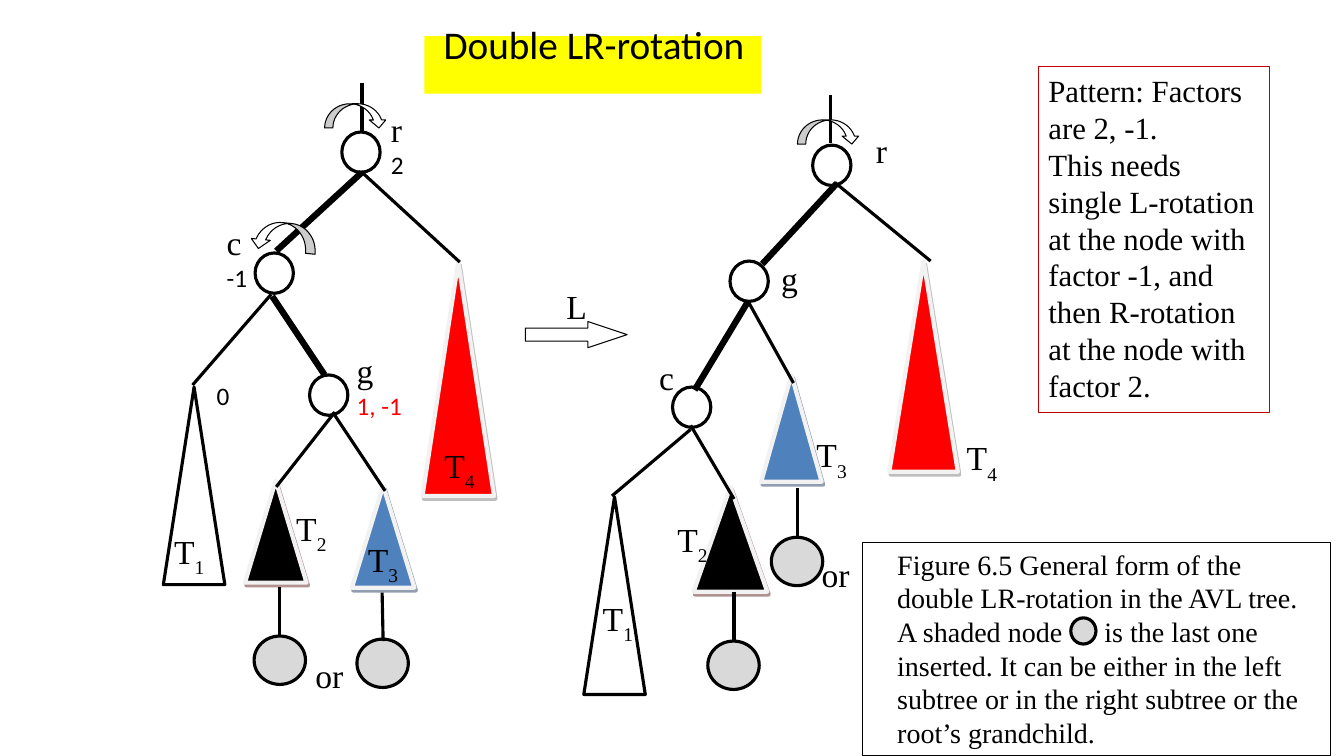
"""Build the slide on the double LR-rotation of an AVL tree."""
import lxml.etree
import pptx
import pptx.dml.color
import pptx.enum.shapes
import pptx.enum.text
import pptx.oxml.ns
import pptx.util

PX = 9144
KIND = pptx.enum.shapes.MSO_SHAPE
HUES = {"black": "000000", "white": "FFFFFF", "red": "FF0000", "blue": "4F81BD",
        "gray": "D9D9D9", "pale": "F2F2F2", "gold": "FFFF00", "wine": "C00000",
        "rust": "622423", "navy": "243F60", "ash": "7F7F7F"}
RGB = {name: pptx.dml.color.RGBColor.from_string(code) for name, code in HUES.items()}
SERIF = {"name": "Times New Roman", "size": pptx.util.Pt(24)}
SANS = {"name": "Calibri", "size": pptx.util.Pt(18)}
qn = pptx.oxml.ns.qn

deck = pptx.Presentation()
deck.slide_width, deck.slide_height = 1333 * PX, 750 * PX
slide = deck.slides.add_slide(deck.slide_layouts[5])
shapes = slide.shapes


def form(kind, box, fill, line, width):
    """Add a preset shape with plain fill and line."""
    shape = shapes.add_shape(kind, *[n * PX for n in box])
    shape.shadow.inherit = False
    if fill:
        shape.fill.solid()
        shape.fill.fore_color.rgb = RGB[fill]
    else:
        shape.fill.background()
    if line:
        shape.line.color.rgb = RGB[line]
        shape.line.width = pptx.util.Pt(width)
    else:
        shape.line.fill.background()
    return shape


def write(frame, rows):
    """Fill a text frame with paragraphs of (text, format, colour, baseline) runs."""
    frame.word_wrap = True
    frame.vertical_anchor = pptx.enum.text.MSO_ANCHOR.TOP
    for i, row in enumerate(rows):
        para = frame.paragraphs[0] if i == 0 else frame.add_paragraph()
        para.alignment = pptx.enum.text.PP_ALIGN.LEFT
        for text, style, hue, base in row:
            run = para.add_run()
            run.text = text
            for key, val in style.items():
                setattr(run.font, key, val)
            run.font.color.rgb = RGB[hue]
            if base:
                run.font._element.set("baseline", str(base * 1000))


form(KIND.RECTANGLE, (421, 36, 334, 57), "gold", None, 0)
title = shapes.title
spot = {"left": 421, "top": 15, "width": 334, "height": 57}
for key, val in spot.items():
    setattr(title, key, val * PX)
write(title.text_frame, [[("Double LR-rotation", SANS | {"size": pptx.util.Pt(28)}, "black", 0)]])
title.text_frame.margin_left = 19 * PX
shapes.element.append(title.element)

trees = [
    (243, 477, 61, 101, "black", "rust"), (349, 482, 62, 101, "blue", "navy"),
    (419, 260, 71, 232, "red", "ash"), (688, 483, 73, 104, "black", "rust"),
    (755, 372, 60, 106, "blue", "navy"), (882, 259, 68, 209, "red", "ash"),
]
for *box, fill, shade in trees:
    tree = form(KIND.FLOWCHART_EXTRACT, box, fill, "pale", 3)
    glow = tree.element.spPr.find(qn("a:effectLst"))
    cast = lxml.etree.SubElement(glow, qn("a:outerShdw"), dist="28400", dir="3780000",
                                 algn="ctr", rotWithShape="0")
    tint = lxml.etree.SubElement(cast, qn("a:srgbClr"), val=HUES[shade])
    lxml.etree.SubElement(tint, qn("a:alpha"), val="50000")

for x, y in [(162, 384), (579, 493)]:
    form(KIND.FLOWCHART_EXTRACT, (x, y, 61, 196), "white", "black", 2.25)

nodes = [(339, 131), (253, 251), (307, 372), (806, 144), (724, 259), (667, 384)]
for x, y in nodes:
    form(KIND.FLOWCHART_CONNECTOR, (x, y, 38, 40), "white", "black", 2.25)
leaves = [(252, 631), (354, 634), (702, 636), (765, 533)]
for x, y in leaves:
    form(KIND.FLOWCHART_CONNECTOR, (x, y, 51, 48), "gray", "black", 2.25)

thin = [
    (359, 82, 359, 132), (358, 170, 456, 260), (269, 292, 191, 382),
    (332, 409, 274, 483), (330, 409, 382, 487), (277, 582, 277, 631),
    (379, 588, 380, 636), (824, 94, 824, 142), (828, 181, 923, 259),
    (742, 299, 787, 380), (685, 426, 607, 492), (685, 422, 728, 495),
    (728, 587, 728, 636), (791, 484, 791, 532),
]
thick = [(359, 171, 274, 249), (270, 294, 322, 372),
         (830, 182, 756, 262), (742, 299, 689, 387)]
for width, edges in ((2.25, thin), (4.5, thick)):
    for ends in edges:
        edge = shapes.add_connector(pptx.enum.shapes.MSO_CONNECTOR.STRAIGHT,
                                    *[n * PX for n in ends])
        edge.line.color.rgb = RGB["black"]
        edge.line.width = pptx.util.Pt(width)
        lxml.etree.SubElement(edge.element.spPr, qn("a:effectLst"))

arrow = form(KIND.RIGHT_ARROW, (521, 319, 101, 26), "white", "black", 0.75)
arrow.adjustments[1] = 1.5
turns = [(267, 202, 28, 66, 95.8, False), (341, 84, 24, 62, 90, True),
         (810, 100, 24, 62, 90, True)]
for *box, angle, flip in turns:
    turn = form(KIND.CURVED_RIGHT_ARROW, box, "white", "black", 0.75)
    turn.rotation = angle
    for i, val in enumerate((0.34, 0.68, 0.33)):
        turn.adjustments[i] = val
    if flip:
        turn.element.spPr.xfrm.set("flipV", "1")

labels = [
    (378, 103, "r", "", "2", "black"), (215, 215, "c", "", "-1", "black"),
    (344, 342, "g", "", "1, -1", "red"), (859, 124, "r", "", "", ""),
    (765, 251, "g", "", "", ""), (644, 349, "c", "", "", ""),
    (552, 279, "L", "", "", ""), (303, 645, "or", "", "", ""),
    (805, 545, "or", "", "", ""), (163, 522, "T", "1", "", ""),
    (284, 499, "T", "2", "", ""), (355, 530, "T", "3", "", ""),
    (431, 436, "T", "4", "", ""), (588, 588, "T", "1", "", ""),
    (662, 510, "T", "2", "", ""), (800, 426, "T", "3", "", ""),
    (949, 429, "T", "4", "", ""),
]
for x, y, name, sub, note, hue in labels:
    rows = [[(name, SERIF, "black", 0)]]
    if sub:
        rows[0].append((sub, SERIF, "black", -30))
    if note:
        rows.append([(note, SANS, hue, 0)])
    label = shapes.add_textbox(x * PX, y * PX, 73 * PX, (81 if note else 50) * PX)
    write(label.text_frame, rows)
zero = shapes.add_textbox(205 * PX, 372 * PX, 38 * PX, 40 * PX)
write(zero.text_frame, [[("0", SANS, "black", 0)]])

rule = form(KIND.RECTANGLE, (1030, 66, 229, 343), None, "wine", 0.75)
mid = SERIF | {"size": pptx.util.Pt(22)}
write(rule.text_frame, [
    [("Pattern: Factors are 2, -1.", mid, "black", 0)],
    [("This needs single L-rotation at the node with factor -1, "
      "and then R-rotation at the node with factor 2.", mid, "black", 0)],
])

note = form(KIND.RECTANGLE, (855, 538, 465, 212), None, "black", 0.75)
small = SERIF | {"size": pptx.util.Pt(20)}
write(note.text_frame, [[
    ("Figure 6.5 General form of the double LR-rotation in the AVL tree. A shaded node",
     small, "black", 0),
    (" ", small, "black", 0),
    ("is the last one inserted. It can be either in the left subtree or in the right "
     "subtree or the root’s grandchild.", small, "black", 0),
]])
para = note.text_frame.paragraphs[0]
para.runs[1].font._element.set("spc", "2500")
para._p.get_or_add_pPr().set("marL", str(25 * PX))
form(KIND.FLOWCHART_CONNECTOR, (1062, 613, 25, 26), "gray", "black", 2.25)

deck.save("out.pptx")
